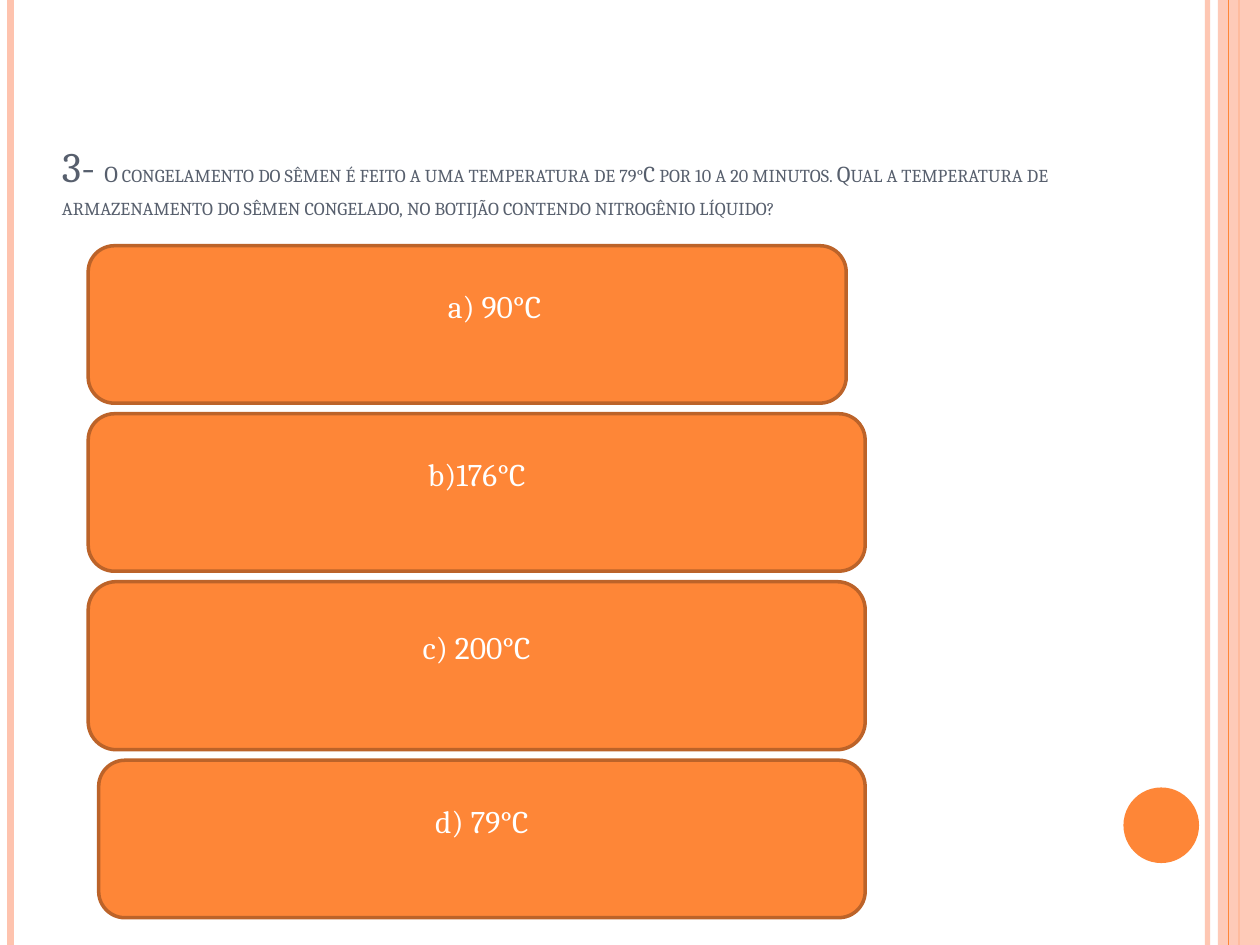
from dataclasses import dataclass

import pptx
import pptx.dml.color
import pptx.enum.shapes
import pptx.enum.text
import pptx.oxml.ns
import pptx.util
from lxml import etree

COLUMNS, ROWS = 120, 90
CELL = pptx.util.Inches(10) // COLUMNS
FONT = "Cambria"
ORANGE, PEACH, BROWN, SLATE, WHITE = "FE8637", "FEC3AE", "BC6329", "575F6D", "FFFFFF"
SHAPES = pptx.enum.shapes.MSO_SHAPE


@dataclass
class Rule:
    column: float
    color: str
    width: float
    opacity: int = 100


@dataclass
class Answer:
    text: str
    left: float
    right: float
    height: float
    indent: float = 0


BACK_RULES = [Rule(115, PEACH, 3, 93), Rule(1, PEACH, 4.5), Rule(118, ORANGE, 1.5)]
FRONT_RULE = Rule(117, ORANGE, 0.75)
ANSWERS = [
    Answer("a) 90°C", 8.4, 80.6, 15, indent=5.2),
    Answer("b)176°C", 8.4, 82.4, 15),
    Answer("c) 200°C", 8.4, 82.4, 16),
    Answer("d) 79°C", 9.4, 82.4, 15),
]
ANSWERS_TOP, ANSWER_GAP = 23.4, 1
QUESTION = (
    "O congelamento do sêmen é feito a uma temperatura de 79°C por 10 a 20 minutos. "
    "Qual a temperatura de armazenamento do sêmen congelado, "
    "no botijão contendo nitrogênio líquido?"
)


def cells(count: float) -> int:
    return round(count * CELL)


def rgb(color: str) -> pptx.dml.color.RGBColor:
    return pptx.dml.color.RGBColor.from_string(color)


def set_opacity(shape, percent: int) -> None:
    color = shape._element.spPr.find(".//" + pptx.oxml.ns.qn("a:srgbClr"))
    etree.SubElement(color, pptx.oxml.ns.qn("a:alpha"), val=str(percent * 1000))


def add_rule(slide, rule: Rule) -> None:
    x = cells(rule.column)
    line = slide.shapes.add_connector(
        pptx.enum.shapes.MSO_CONNECTOR.STRAIGHT, x, 0, x, cells(ROWS))
    line.line.color.rgb = rgb(rule.color)
    line.line.width = pptx.util.Pt(rule.width)
    if rule.opacity < 100:
        set_opacity(line, rule.opacity)
    etree.SubElement(line._element.spPr, pptx.oxml.ns.qn("a:effectLst"))


def add_block(slide, kind, left: float, top: float, width: float, height: float, fill: str):
    shape = slide.shapes.add_shape(kind, *map(cells, (left, top, width, height)))
    shape.shadow.inherit = False
    shape.fill.solid()
    shape.fill.fore_color.rgb = rgb(fill)
    shape.line.fill.background()
    return shape


def add_answer(slide, answer: Answer, top: float) -> None:
    shape = add_block(slide, SHAPES.ROUNDED_RECTANGLE, answer.left, top,
                      answer.right - answer.left, answer.height, ORANGE)
    shape.line.color.rgb = rgb(BROWN)
    shape.line.width = pptx.util.Pt(2)
    frame = shape.text_frame
    frame.vertical_anchor = pptx.enum.text.MSO_ANCHOR.MIDDLE
    frame.margin_left = cells(1.2 + answer.indent)
    frame.margin_bottom = cells(4.1)  # lifts the text above the middle
    paragraph = frame.paragraphs[0]
    paragraph.text = answer.text
    paragraph.alignment = pptx.enum.text.PP_ALIGN.CENTER
    paragraph.font.name = FONT
    paragraph.font.size = pptx.util.Pt(18)
    paragraph.font.color.rgb = rgb(WHITE)


def fill_title(slide) -> None:
    title = slide.shapes.title
    title.left, title.top, title.width, title.height = map(cells, (4.7, 6.6, 98, 15))
    frame = title.text_frame
    frame.word_wrap = True
    frame.auto_size = pptx.enum.text.MSO_AUTO_SIZE.NONE
    frame.vertical_anchor = pptx.enum.text.MSO_ANCHOR.BOTTOM
    paragraph = frame.paragraphs[0]
    paragraph.alignment = pptx.enum.text.PP_ALIGN.LEFT
    paragraph.font.name = FONT
    paragraph.font.color.rgb = rgb(SLATE)
    for text, size in (("3- ", 30), (QUESTION, 13)):
        run = paragraph.add_run()
        run.text = text
        run.font.size = pptx.util.Pt(size)
        run.font._element.set("cap", "small")


def main() -> None:
    presentation = pptx.Presentation()
    presentation.slide_width = cells(COLUMNS)
    presentation.slide_height = cells(ROWS)
    slide = presentation.slides.add_slide(presentation.slide_layouts[5])

    # Side stripes and disc
    for rule in BACK_RULES:
        add_rule(slide, rule)
    band = add_block(slide, SHAPES.RECTANGLE, 116, 0, 4, ROWS, PEACH)
    set_opacity(band, 87)
    add_rule(slide, FRONT_RULE)
    add_block(slide, SHAPES.OVAL, 107, 75, 7.2, 7.2, ORANGE)

    # Question and answers
    fill_title(slide)
    top = ANSWERS_TOP
    for answer in ANSWERS:
        add_answer(slide, answer, top)
        top += answer.height + ANSWER_GAP

    presentation.save("out.pptx")


if __name__ == "__main__":
    main()
